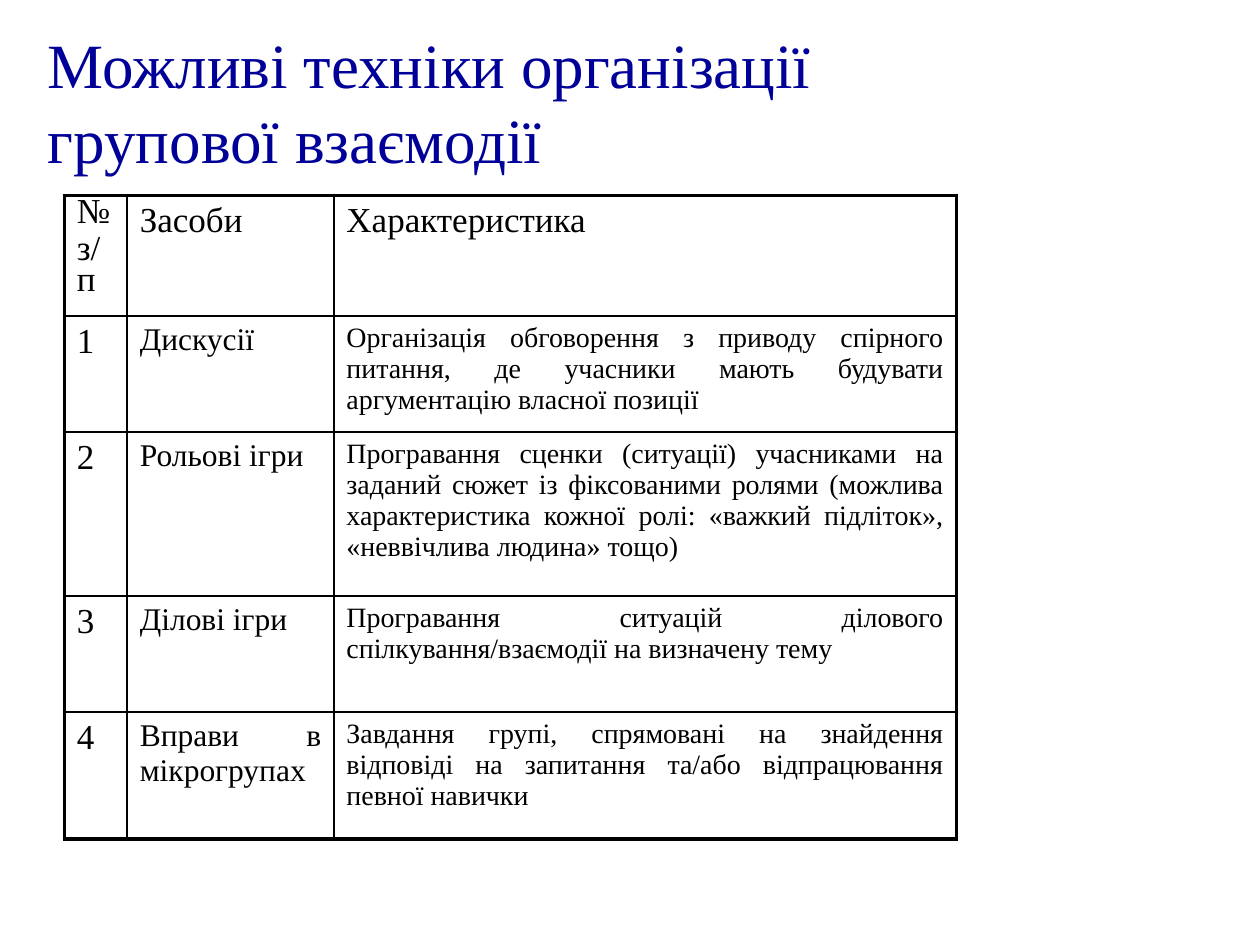
from lxml import etree
from pptx import Presentation
from pptx.dml.color import RGBColor
from pptx.enum.text import MSO_ANCHOR, PP_ALIGN
from pptx.oxml.ns import qn
from pptx.util import Inches, Pt

LEFT, JUSTIFY = PP_ALIGN.LEFT, PP_ALIGN.JUSTIFY
MIDDLE, TOP = MSO_ANCHOR.MIDDLE, MSO_ANCHOR.TOP
TITLE_ONLY = 5

HEADER = ["№\nз/п", "Засоби", "Характеристика"]
TECHNIQUES = [
    ("Дискусії", "Організація обговорення з приводу спірного питання, "
     "де учасники мають будувати аргументацію власної позиції"),
    ("Рольові ігри", "Програвання сценки (ситуації) учасниками на заданий сюжет "
     "із фіксованими ролями (можлива характеристика кожної ролі: "
     "«важкий підліток», «неввічлива людина» тощо)"),
    ("Ділові ігри", "Програвання ситуацій ділового спілкування/взаємодії "
     "на визначену тему"),
    ("Вправи в мікрогрупах", "Завдання групі, спрямовані на знайдення відповіді "
     "на запитання та/або відпрацювання певної навички"),
]
COLUMN_WIDTHS = [0.5, 1.64, 4.94]
ROW_HEIGHTS = [0.96, 0.92, 1.3, 0.92, 1.01]
HEADER_SIZE = 20
COLUMN_SIZES = [20, 18, 16]
NUMBER_SPACINGS = [0.7, 0.8]


def color(value):
    return RGBColor.from_string(value)


class SlideBuilder:
    font = "Times New Roman"
    title_color = "000099"
    ink = "000000"
    thin, thick = 1, 2.25

    def __init__(self, slide):
        self.slide = slide

    def style(self, para, size, hex_color, alignment):
        para.alignment = alignment
        for span in para.runs:
            span.font.name = self.font
            span.font.size = Pt(size)
            span.font.bold = False
            span.font.color.rgb = color(hex_color)

    def title(self, text, left, top, width, height):
        box = self.slide.shapes.title
        box.left, box.top = Inches(left), Inches(top)
        box.width, box.height = Inches(width), Inches(height)
        frame = box.text_frame
        frame.text = text
        frame.word_wrap = True
        frame.vertical_anchor = MIDDLE
        self.style(frame.paragraphs[0], 36, self.title_color, LEFT)

    def border(self, cell, side, width):
        properties = cell._tc.get_or_add_tcPr()
        line = etree.SubElement(properties, qn(f"a:ln{side}"), w=str(Pt(width)))
        fill = etree.SubElement(line, qn("a:solidFill"))
        etree.SubElement(fill, qn("a:srgbClr"), val=self.ink)

    def cell(self, cell, text, size, outer_sides):
        """Fill one cell; outer_sides are the sides on the table's edge."""
        cell.text_frame.text = text
        cell.vertical_anchor = TOP
        for index, para in enumerate(cell.text_frame.paragraphs):
            self.style(para, size, self.ink, JUSTIFY)
            if index:
                para.space_before = Pt(size * 0.2)
        for side in "LRTB":
            self.border(cell, side, self.thick if side in outer_sides else self.thin)
        cell.fill.background()

    def table(self, rows, left, top, widths, heights):
        frame = self.slide.shapes.add_table(
            len(heights), len(widths), Inches(left), Inches(top),
            Inches(sum(widths)), Inches(sum(heights)))
        table = frame.table
        table.first_row = table.horz_banding = False
        for column, width in zip(table.columns, widths):
            column.width = Inches(width)
        for row, height in zip(table.rows, heights):
            row.height = Inches(height)
        for r, texts in enumerate(rows):
            for c, text in enumerate(texts):
                edges = {"L": c == 0, "R": c == len(widths) - 1,
                         "T": r == 0, "B": r == len(heights) - 1}
                outer_sides = [side for side, outer in edges.items() if outer]
                size = COLUMN_SIZES[c] if r else HEADER_SIZE
                self.cell(table.cell(r, c), text, size, outer_sides)
        return table


def main():
    deck = Presentation()
    deck.slide_width, deck.slide_height = Inches(10), Inches(7.5)
    builder = SlideBuilder(deck.slides.add_slide(deck.slide_layouts[TITLE_ONLY]))
    builder.title("Можливі техніки організації групової взаємодії",
                  0.28, 0.29, 6.46, 1.02)
    rows = [HEADER] + [(str(number), name, description) for number, (name, description)
                       in enumerate(TECHNIQUES, start=1)]
    table = builder.table(rows, 0.51, 1.55, COLUMN_WIDTHS, ROW_HEIGHTS)
    number_paras = table.cell(0, 0).text_frame.paragraphs
    for para, spacing in zip(number_paras, NUMBER_SPACINGS):
        para.line_spacing = spacing
    deck.save("out.pptx")


if __name__ == "__main__":
    main()
